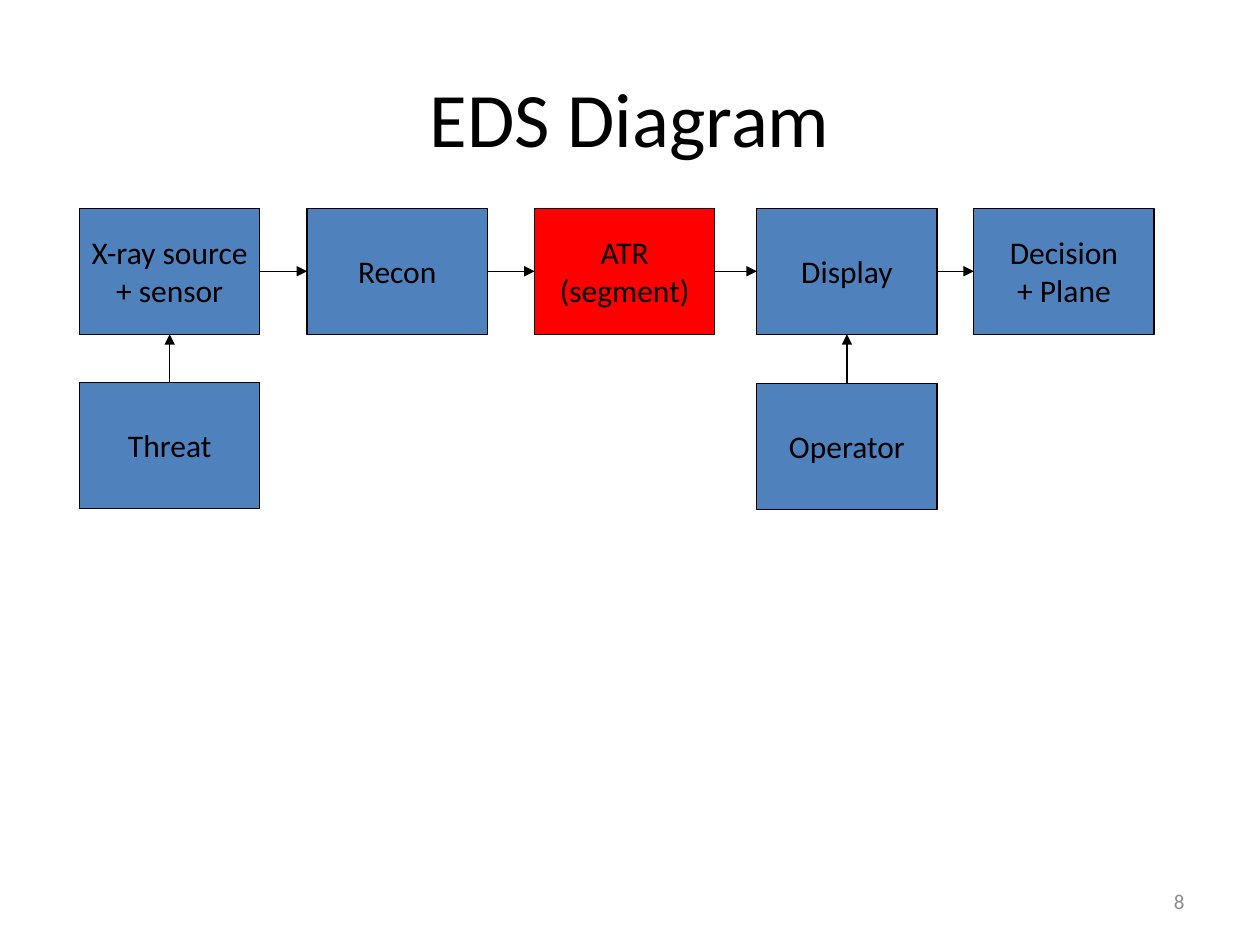
"""Builds the EDS block diagram slide."""
from pptx import Presentation
from pptx.dml.color import RGBColor
from pptx.enum.shapes import MSO_CONNECTOR, MSO_SHAPE
from pptx.enum.text import MSO_ANCHOR, PP_ALIGN
from pptx.oxml.ns import qn
from pptx.util import Pt
from lxml.etree import SubElement

BLACK = RGBColor(0x00, 0x00, 0x00)
BLUE = RGBColor(0x4F, 0x81, 0xBD)
RED = RGBColor(0xFF, 0x00, 0x00)
GRAY = RGBColor(0x8C, 0x8C, 0x8C)

WIDE, HIGH = 103, 72
TOP = 119


def write(shape, text, size=18, color=BLACK, align=PP_ALIGN.CENTER, wrap=True):
    frame = shape.text_frame
    frame.word_wrap = wrap
    frame.vertical_anchor = MSO_ANCHOR.MIDDLE
    frame.text = text
    for para in frame.paragraphs:
        para.alignment = align
        font = para.runs[0].font
        font.name = "Calibri"
        font.size = Pt(size)
        font.color.rgb = color


deck = Presentation()
deck.slide_width, deck.slide_height = Pt(720), Pt(540)
shapes = deck.slides.add_slide(deck.slide_layouts[6]).shapes

title = shapes.add_textbox(Pt(36), Pt(21.6), Pt(648), Pt(90))
write(title, "EDS Diagram", size=44)

chain = [
    ("X-ray source\n+ sensor", 45.5, BLUE),
    ("Recon", 175.5, BLUE),
    ("ATR\n(segment)", 305.5, RED),
    ("Display", 432.5, BLUE),
    ("Decision\n+ Plane", 556.5, BLUE),
]
inputs = [("Threat", 45.5, 218.5), ("Operator", 432.5, 219)]

boxes = [(text, left, TOP, fill) for text, left, fill in chain]
boxes += [(text, left, top, BLUE) for text, left, top in inputs]
for text, left, top, fill in boxes:
    box = shapes.add_shape(
        MSO_SHAPE.RECTANGLE, Pt(left), Pt(top), Pt(WIDE), Pt(HIGH))
    box.shadow.inherit = False
    box.fill.solid()
    box.fill.fore_color.rgb = fill
    box.line.color.rgb = BLACK
    box.line.width = Pt(0.75)
    write(box, text, wrap=False)

mid = TOP + HIGH / 2
links = [(here[1] + WIDE, mid, there[1], mid)
         for here, there in zip(chain, chain[1:])]
links += [(left + WIDE / 2, top, left + WIDE / 2, TOP + HIGH)
          for text, left, top in inputs]
for ends in links:
    link = shapes.add_connector(MSO_CONNECTOR.STRAIGHT, *map(Pt, ends))
    link.line.color.rgb = BLACK
    link.line.width = Pt(0.75)
    SubElement(link.line._get_or_add_ln(), qn("a:tailEnd"), type="triangle")
    SubElement(link._element.spPr, qn("a:effectLst"))

number = shapes.add_textbox(Pt(516), Pt(500.5), Pt(168), Pt(28.75))
write(number, "8", size=12, color=GRAY, align=PP_ALIGN.RIGHT)

deck.save("out.pptx")
